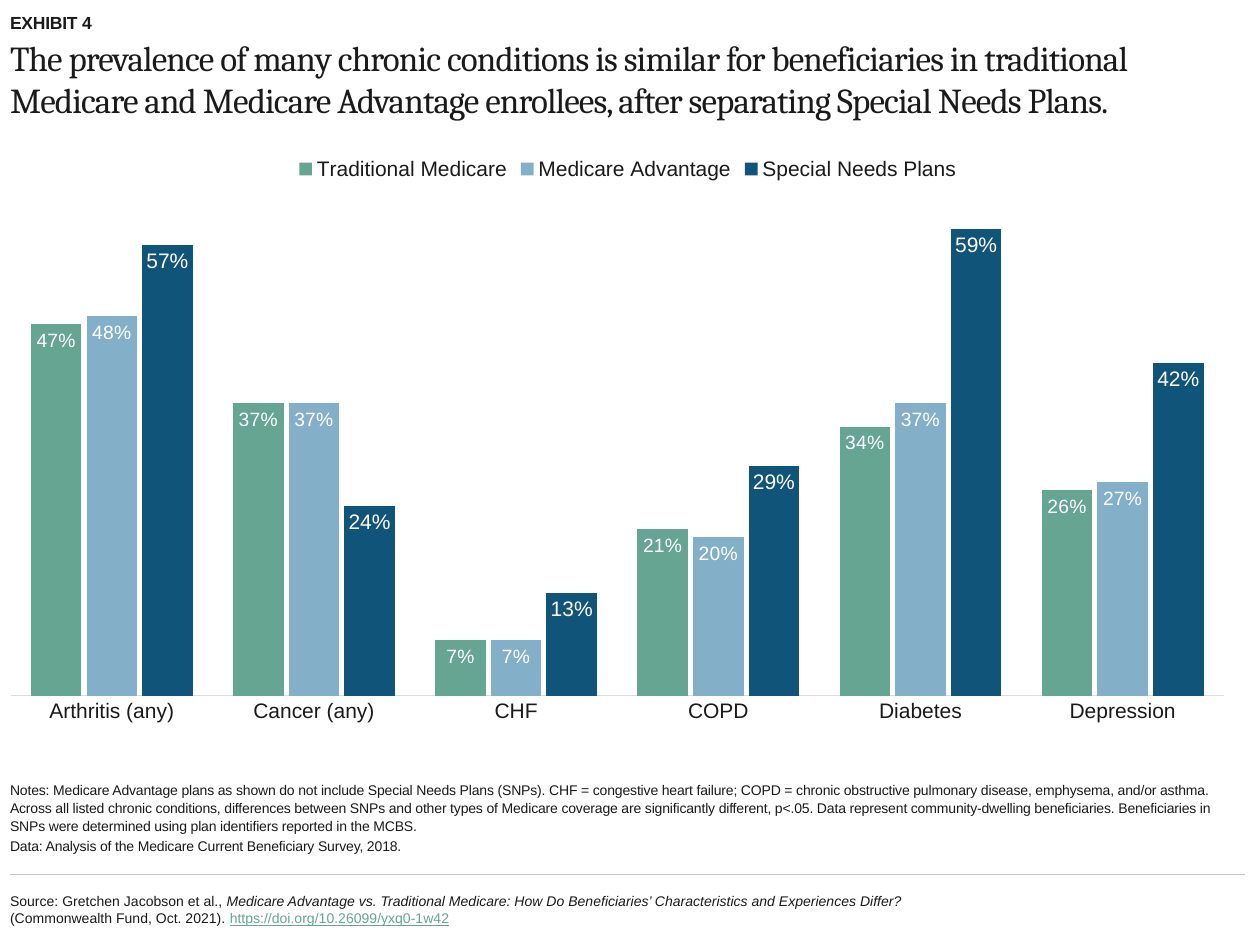
import pptx
import pptx.chart.data
import pptx.dml.color
import pptx.enum.chart
import pptx.enum.shapes
import pptx.enum.text
import pptx.oxml
import pptx.oxml.ns
import pptx.util
from lxml import etree

THEME = {
    "ink": "1A1A1A", "white": "FFFFFF", "rule": "C6C6C6", "axis": "DDDDDD", "link": "65A591",
    "sans": "Arial", "serif": "Cambria",
    "title": 20, "exhibit": 10, "note": 8, "chart": 12, "label": 11, "hairline": 0.75,
}
EXHIBIT = "EXHIBIT 4"
TITLE = ("The prevalence of many chronic conditions is similar for beneficiaries in traditional "
         "Medicare and Medicare Advantage enrollees, after separating Special Needs Plans.")
NOTES = [
    "Notes: Medicare Advantage plans as shown do not include Special Needs Plans (SNPs). "
    "CHF = congestive heart failure; COPD = chronic obstructive pulmonary disease, emphysema, and/or asthma. "
    "Across all listed chronic conditions, differences between SNPs and other types of Medicare coverage "
    "are significantly different, p<.05. Data represent community-dwelling beneficiaries. "
    "Beneficiaries in SNPs were determined using plan identifiers reported in the MCBS.",
    "Data: Analysis of the Medicare Current Beneficiary Survey, 2018.",
]
SOURCE = [
    ("Source: Gretchen Jacobson et al., ", {}),
    ("Medicare Advantage vs. Traditional Medicare: How Do Beneficiaries’ Characteristics "
     "and Experiences Differ?", {"italic": True}),
    (" (Commonwealth Fund, Oct. 2021). ", {}),
    ("https://doi.org/10.26099/yxq0-1w42", {"color": "link", "underline": True}),
]
CONDITIONS = ["Arthritis (any)", "Cancer (any)", "CHF", "COPD", "Diabetes", "Depression"]
PLANS = [
    ("Traditional Medicare", [0.47, 0.37, 0.07, 0.21, 0.34, 0.26], "65A591", "label"),
    ("Medicare Advantage", [0.48, 0.37, 0.07, 0.20, 0.37, 0.27], "83B0C8", "label"),
    ("Special Needs Plans", [0.57, 0.24, 0.13, 0.29, 0.59, 0.42], "115479", "chart"),
]
PLOT = {"x": 0, "y": 0.128, "w": 0.983, "h": 0.785}

LEFT, WIDTH = 0.08, 9.8
RULE_Y = 6.94
ROWS = {"exhibit": (0.05, 0.21), "title": (0.29, 0.83), "chart": (1.14, 4.8),
        "notes": (6.28, 0.5), "source": (6.99, 0.46)}
Inches, Pt = pptx.util.Inches, pptx.util.Pt
ANCHOR = pptx.enum.text.MSO_ANCHOR


def rgb(value):
    return pptx.dml.color.RGBColor.from_string(value)


def place(row, width=WIDTH):
    top, height = ROWS[row]
    return [Inches(v) for v in (LEFT, top, width, height)]


def style(font, size="chart", color="ink", face="sans", bold=False, italic=False, underline=False):
    font.size, font.name = Pt(THEME[size]), THEME[face]
    font.bold, font.italic, font.underline = bold, italic, underline
    font.color.rgb = rgb(THEME[color])


def write(sp, paragraphs, anchor=ANCHOR.BOTTOM, spacing=0, gap=0, leading=1.0, **fmt):
    tf = sp.text_frame
    tf.word_wrap = True
    tf.auto_size = pptx.enum.text.MSO_AUTO_SIZE.NONE
    tf.vertical_anchor = anchor
    tf.margin_left = tf.margin_top = tf.margin_right = tf.margin_bottom = 0
    for i, runs in enumerate(paragraphs):
        p = tf.paragraphs[0] if i == 0 else tf.add_paragraph()
        p.alignment = pptx.enum.text.PP_ALIGN.LEFT
        p.line_spacing = leading
        if i:
            p.space_before = Pt(gap)
        for text, extra in runs:
            r = p.add_run()
            r.text = text
            style(r.font, **{**fmt, **extra})
            if spacing:
                r.font._element.set("spc", str(round(spacing * 100)))


def add_text(slide, row, paragraphs, width=WIDTH, **fmt):
    write(slide.shapes.add_textbox(*place(row, width)), paragraphs, **fmt)


def set_plot_layout(chart):
    area = chart._chartSpace.chart.plotArea
    for old in area.findall(pptx.oxml.ns.qn("c:layout")):
        area.remove(old)
    values = {"layoutTarget": "inner", "xMode": "edge", "yMode": "edge", **PLOT}
    layout = etree.Element(pptx.oxml.ns.qn("c:layout"))
    manual = etree.SubElement(layout, pptx.oxml.ns.qn("c:manualLayout"))
    for tag, value in values.items():
        etree.SubElement(manual, pptx.oxml.ns.qn("c:" + tag)).set("val", str(value))
    area.insert(0, layout)


def add_prevalence_chart(slide):
    data = pptx.chart.data.CategoryChartData(number_format="0%")
    data.categories = CONDITIONS
    for name, values, _, _ in PLANS:
        data.add_series(name, values)
    kind = pptx.enum.chart.XL_CHART_TYPE.COLUMN_CLUSTERED
    chart = slide.shapes.add_chart(kind, *place("chart"), data).chart
    style(chart.font, size="exhibit")
    chart.has_title = False
    chart.has_legend = True
    chart.legend.position = pptx.enum.chart.XL_LEGEND_POSITION.TOP
    chart.legend.include_in_layout = False
    style(chart.legend.font)

    cat, val = chart.category_axis, chart.value_axis
    cat.major_tick_mark = cat.minor_tick_mark = pptx.enum.chart.XL_TICK_MARK.NONE
    cat.format.line.color.rgb = rgb(THEME["axis"])
    cat.format.line.width = Pt(THEME["hairline"])
    style(cat.tick_labels.font)
    val.minimum_scale, val.maximum_scale, val.major_unit = 0, 0.6, 0.2
    val.has_major_gridlines = False
    val.visible = False

    plot = chart.plots[0]
    plot.gap_width, plot.overlap, plot.vary_by_categories = 80, -10, False
    for series, (_, _, color, size) in zip(plot.series, PLANS):
        series.format.fill.solid()
        series.format.fill.fore_color.rgb = rgb(color)
        labels = series.data_labels
        labels.show_value = True
        labels.position = pptx.enum.chart.XL_LABEL_POSITION.INSIDE_END
        labels.number_format, labels.number_format_is_linked = "0%", False
        style(labels.font, size=size, color="white")
    set_plot_layout(chart)


def add_rule(slide):
    line = slide.shapes.add_connector(
        pptx.enum.shapes.MSO_CONNECTOR.STRAIGHT,
        Inches(LEFT + WIDTH), Inches(RULE_Y), Inches(LEFT), Inches(RULE_Y))
    line.line.color.rgb = rgb(THEME["rule"])
    line.line.width = Pt(THEME["hairline"])
    etree.SubElement(line._element.spPr, pptx.oxml.ns.qn("a:effectLst"))


def main():
    prs = pptx.Presentation()
    prs.slide_width, prs.slide_height = Inches(10), Inches(7.5)
    slide = prs.slides.add_slide(prs.slide_layouts[5])
    slide.background.fill.solid()
    slide.background.fill.fore_color.rgb = rgb(THEME["white"])

    title = slide.shapes.title
    title.left, title.top, title.width, title.height = place("title")
    write(title, [[(TITLE, {})]], anchor=ANCHOR.TOP, spacing=-0.5, size="title", face="serif")
    add_text(slide, "source", [SOURCE], width=7.8, anchor=ANCHOR.MIDDLE, size="note")
    add_rule(slide)
    add_prevalence_chart(slide)
    add_text(slide, "exhibit", [[(EXHIBIT, {})]], spacing=-0.1, size="exhibit", bold=True)
    add_text(slide, "notes", [[(text, {})] for text in NOTES],
             spacing=-0.1, gap=1.6, leading=1.05, size="note")
    prs.save("out.pptx")


if __name__ == "__main__":
    main()
